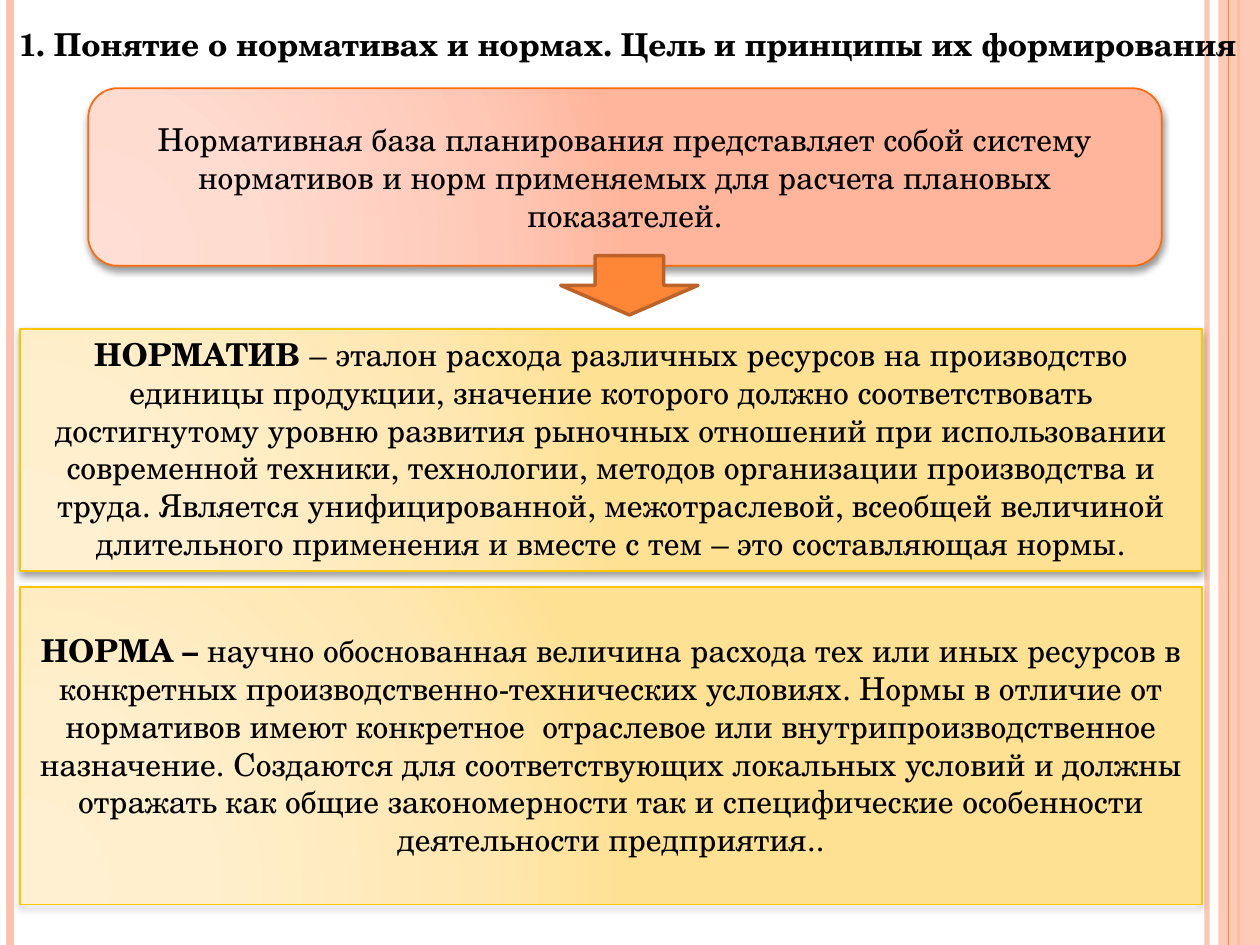
from dataclasses import dataclass

from lxml.etree import SubElement
from pptx import Presentation
from pptx.dml.color import RGBColor
from pptx.enum.shapes import MSO_CONNECTOR as Connector, MSO_SHAPE as Preset
from pptx.enum.text import MSO_ANCHOR as Anchor, MSO_AUTO_SIZE as AutoSize, PP_ALIGN as Align
from pptx.oxml.ns import qn
from pptx.util import Inches, Pt

FONT = "TeX Gyre Schola"
PAGE_WIDTH, PAGE_HEIGHT = 10, 7.5
COLORS = {
    "text": "000000",
    "shadow": "000000",
    "orange": "FE8637",
    "orange_edge": "BC6329",
    "pink": "FEC3AE",
    "pink_edge": "FF6B0A",
    "yellow_edge": "F8C700",
}
STOPS = (0, 30, 75, 100)
PINK_SHADES = ("FFDED5", "FFDBD0", "FFC8B6", "FFB59B")
YELLOW_SHADES = ("FFF0D1", "FFEFCC", "FFE7B1", "FFE193")
GLOW_FOCUS = {"l": 5, "t": 100, "r": 120, "b": 10}


@dataclass
class Stripe:
    x: float
    color: str
    weight: float
    opacity: int = 100


@dataclass
class Panel:
    preset: Preset
    left: float
    top: float
    width: float
    height: float
    shades: tuple[str, ...]
    edge: str
    term: str
    body: str
    anchor: Anchor = Anchor.TOP
    top_inset: float = 0.05


BACK_STRIPES = (Stripe(9.58, "pink", 3, 93), Stripe(0.08, "pink", 4.5), Stripe(9.83, "orange", 1.5))
FRONT_STRIPE = Stripe(9.75, "orange", 0.75)

PANELS = (
    Panel(
        Preset.RECTANGLE, 0.16, 4.66, 9.38, 2.52, YELLOW_SHADES, "yellow_edge",
        "НОРМА – ",
        "научно обоснованная величина расхода тех или иных ресурсов в конкретных "
        "производственно-технических условиях. Нормы в отличие от нормативов имеют "
        "конкретное  отраслевое или внутрипроизводственное назначение. Создаются для "
        "соответствующих локальных условий и должны отражать как общие закономерности "
        "так и специфические особенности деятельности предприятия..",
        top_inset=0.35,
    ),
    Panel(
        Preset.ROUNDED_RECTANGLE, 0.7, 0.7, 8.52, 1.41, PINK_SHADES, "pink_edge",
        "",
        "Нормативная база планирования представляет собой систему нормативов и норм "
        "применяемых для расчета плановых показателей.",
        anchor=Anchor.MIDDLE,
    ),
    Panel(
        Preset.RECTANGLE, 0.16, 2.61, 9.38, 1.92, YELLOW_SHADES, "yellow_edge",
        "НОРМАТИВ ",
        "– эталон расхода различных ресурсов на производство единицы продукции, значение "
        "которого должно соответствовать достигнутому уровню развития рыночных отношений "
        "при использовании современной техники, технологии, методов организации "
        "производства и труда. Является унифицированной, межотраслевой, всеобщей "
        "величиной длительного применения и вместе с тем – это составляющая нормы.",
    ),
)


def rgb(name: str) -> RGBColor:
    return RGBColor.from_string(COLORS[name])


def set_opacity(parent, percent: int) -> None:
    color = next(parent.iter(qn("a:srgbClr")))
    SubElement(color, qn("a:alpha"), val=str(percent * 1000))


def style_span(span, bold: bool) -> None:
    span.font.name = FONT
    span.font.size = Pt(18)
    span.font.bold = bold
    span.font.color.rgb = rgb("text")


def add_stripe(page, stripe: Stripe) -> None:
    x = Inches(stripe.x)
    line = page.shapes.add_connector(Connector.STRAIGHT, x, 0, x, Inches(PAGE_HEIGHT))
    line.line.color.rgb = rgb(stripe.color)
    line.line.width = Pt(stripe.weight)
    properties = line.element.spPr
    if stripe.opacity < 100:
        set_opacity(properties, stripe.opacity)
    SubElement(properties, qn("a:effectLst"))


def add_box(page, preset: Preset, left: float, top: float, width: float, height: float):
    box = page.shapes.add_shape(preset, Inches(left), Inches(top), Inches(width), Inches(height))
    box.shadow.inherit = False
    return box


def fill_with_glow(box, shades: tuple[str, ...]) -> None:
    box.fill.gradient()
    gradient = box.element.spPr.find(qn("a:gradFill"))
    for child in list(gradient):
        gradient.remove(child)
    stops = SubElement(gradient, qn("a:gsLst"))
    for position, shade in zip(STOPS, shades):
        stop = SubElement(stops, qn("a:gs"), pos=str(position * 1000))
        SubElement(stop, qn("a:srgbClr"), val=shade)
    circle = SubElement(gradient, qn("a:path"))
    circle.set("path", "circle")
    focus = {side: str(percent * 1000) for side, percent in GLOW_FOCUS.items()}
    SubElement(circle, qn("a:fillToRect"), focus)


def add_shadow(box) -> None:
    effects = box.element.spPr.find(qn("a:effectLst"))
    shadow = SubElement(
        effects, qn("a:outerShdw"), blurRad=str(Pt(4)), dist=str(Pt(2)),
        dir=str(90 * 60000), rotWithShape="0",
    )
    SubElement(shadow, qn("a:srgbClr"), val=COLORS["shadow"])
    set_opacity(shadow, 40)


def add_panel(page, panel: Panel) -> None:
    box = add_box(page, panel.preset, panel.left, panel.top, panel.width, panel.height)
    fill_with_glow(box, panel.shades)
    box.line.color.rgb = rgb(panel.edge)
    box.line.width = Pt(1)
    add_shadow(box)
    frame = box.text_frame
    frame.word_wrap = True
    frame.vertical_anchor = panel.anchor
    frame.margin_top = Inches(panel.top_inset)
    para = frame.paragraphs[0]
    para.alignment = Align.CENTER
    for text, bold in ((panel.term, True), (panel.body, False)):
        if text:
            span = para.add_run()
            span.text = text
            style_span(span, bold)


def place_title(page, text: str) -> None:
    title = page.shapes.title
    title.left, title.top = Inches(0.05), Inches(0.15)
    title.width, title.height = Inches(9.95), Inches(0.71)
    frame = title.text_frame
    frame.text = text
    frame.word_wrap = False
    frame.auto_size = AutoSize.NONE
    frame.vertical_anchor = Anchor.TOP
    para = frame.paragraphs[0]
    para.alignment = Align.LEFT
    style_span(para.runs[0], True)
    page.shapes.element.append(title.element)


def add_side_band(page) -> None:
    width = 0.33
    band = add_box(page, Preset.RECTANGLE, PAGE_WIDTH - width, 0, width, PAGE_HEIGHT)
    band.fill.solid()
    band.fill.fore_color.rgb = rgb("pink")
    set_opacity(band.element.spPr, 87)
    band.line.fill.background()


def add_down_arrow(page) -> None:
    arrow = add_box(page, Preset.DOWN_ARROW, 4.45, 2.03, 1.09, 0.47)
    arrow.fill.solid()
    arrow.fill.fore_color.rgb = rgb("orange")
    arrow.line.color.rgb = rgb("orange_edge")
    arrow.line.width = Pt(2)


def main() -> None:
    deck = Presentation()
    deck.slide_width, deck.slide_height = Inches(PAGE_WIDTH), Inches(PAGE_HEIGHT)
    page = deck.slides.add_slide(deck.slide_layouts[5])
    for stripe in BACK_STRIPES:
        add_stripe(page, stripe)
    add_side_band(page)
    add_stripe(page, FRONT_STRIPE)
    place_title(page, "1. Понятие о нормативах и нормах. Цель и принципы их формирования")
    for panel in PANELS:
        add_panel(page, panel)
    add_down_arrow(page)
    deck.save("out.pptx")


if __name__ == "__main__":
    main()
